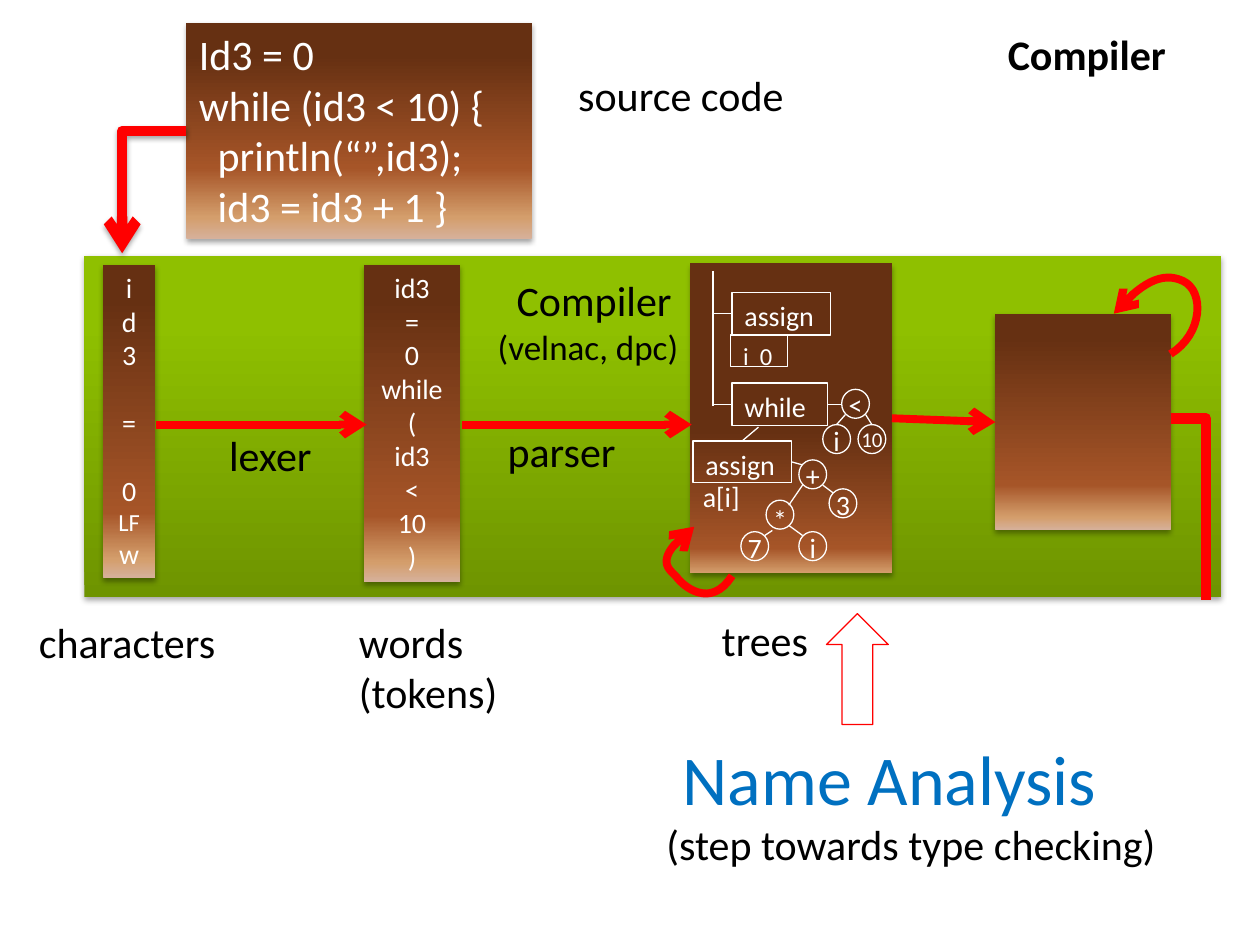
from dataclasses import dataclass
from typing import Optional

from lxml.etree import SubElement
from pptx import Presentation
from pptx.dml.color import RGBColor
from pptx.enum.shapes import MSO_CONNECTOR, MSO_SHAPE
from pptx.enum.text import MSO_ANCHOR, MSO_AUTO_SIZE, PP_ALIGN
from pptx.oxml.ns import qn
from pptx.util import Inches, Pt

COLORS = {"text": "000000", "white": "FFFFFF", "red": "FF0000", "blue": "0070C0"}
GREEN = ((0, "6E9400"), (80, "8FC000"), (100, "90C100"))
BROWN_HEX = ("D6B19C", "D49E6C", "A65528", "663012")
SOURCE_BROWN = tuple(zip((0, 10, 33, 85), BROWN_HEX))
STAGE_BROWN = tuple(zip((0, 6, 21, 89), BROWN_HEX))
TREE_BROWN = tuple(zip((0, 0, 8, 46), BROWN_HEX))
TOP, LEFT, BOTTOM, RIGHT = range(4)


@dataclass
class Line:
    text: str
    size: float = 24
    indent: float = 0
    before: float = 0


@dataclass
class Label:
    left: float
    top: float
    width: float
    height: float
    lines: list
    color: str = "text"
    bold: bool = False


@dataclass
class Node:
    left: float
    top: float
    text: str
    label_width: float = 0.31
    label_height: float = 0.37
    size: float = 16
    drop: float = 0.01


@dataclass
class Joint:
    box: object
    side: int


deck = Presentation()
deck.slide_width, deck.slide_height = Inches(10), Inches(7.5)
page = deck.slides.add_slide(deck.slide_layouts[6])


def rgb(name: str) -> RGBColor:
    return RGBColor.from_string(COLORS[name])


def write(shape, lines: list, color: str, align=PP_ALIGN.LEFT, bold: bool = False) -> None:
    frame = shape.text_frame
    frame.vertical_anchor = MSO_ANCHOR.TOP
    for number, line in enumerate(lines):
        para = frame.add_paragraph() if number else frame.paragraphs[0]
        para.alignment = align
        if line.indent:
            para._p.get_or_add_pPr().set("marL", str(Inches(line.indent)))
        if line.before:
            para.space_before = Pt(line.before)
        span = para.add_run()
        span.text = line.text
        for key, value in {"name": "Calibri", "size": Pt(line.size), "bold": bold}.items():
            setattr(span.font, key, value)
        span.font.color.rgb = rgb(color)


def add_label(label: Label, align=PP_ALIGN.LEFT) -> None:
    box = page.shapes.add_textbox(*map(Inches, (label.left, label.top, label.width, label.height)))
    box.text_frame.word_wrap = False
    box.text_frame.auto_size = MSO_AUTO_SIZE.SHAPE_TO_FIT_TEXT
    write(box, label.lines, label.color, align, label.bold)


def add_shadow(shape) -> None:
    """Put a soft shadow just below the shape."""
    properties = shape._element.spPr
    effects = properties.find(qn("a:effectLst"))
    if effects is None:
        effects = SubElement(properties, qn("a:effectLst"))
    shadow = SubElement(effects, qn("a:outerShdw"), blurRad=str(Pt(3.1)),
                        dist=str(Pt(1.8)), dir="5400000", rotWithShape="0")
    color = SubElement(shadow, qn("a:srgbClr"), val=COLORS["text"])
    SubElement(color, qn("a:alpha"), val="35000")


def add_panel(left: float, top: float, width: float, height: float, stops: tuple):
    """Draw a shadowed rectangle whose gradient runs from bottom to top."""
    panel = page.shapes.add_shape(MSO_SHAPE.RECTANGLE, *map(Inches, (left, top, width, height)))
    panel.line.fill.background()
    panel.shadow.inherit = False
    panel.fill.gradient()
    gradient = panel._element.spPr.find(qn("a:gradFill"))
    for child in list(gradient):
        gradient.remove(child)
    stop_list = SubElement(gradient, qn("a:gsLst"))
    for position, color in stops:
        stop = SubElement(stop_list, qn("a:gs"), pos=str(position * 1000))
        SubElement(stop, qn("a:srgbClr"), val=color)
    SubElement(gradient, qn("a:lin"), ang="16200000", scaled="0")
    add_shadow(panel)
    return panel


def add_outline(kind, left: float, top: float, width: float, height: float,
                color: str = "white", fill: Optional[str] = None):
    shape = page.shapes.add_shape(kind, *map(Inches, (left, top, width, height)))
    shape.shadow.inherit = False
    if fill:
        shape.fill.solid()
        shape.fill.fore_color.rgb = rgb(fill)
    else:
        shape.fill.background()
    shape.line.color.rgb, shape.line.width = rgb(color), Pt(0.75)
    return shape


def add_tree_box(left: float, top: float, width: float, height: float, text: str, size: float = 16):
    box = add_outline(MSO_SHAPE.RECTANGLE, left, top, width, height)
    box.text_frame.word_wrap = True
    write(box, [Line(text, size)], "white")
    return box


def add_node(node: Node) -> None:
    diameter, height = 0.22, 0.23
    add_outline(MSO_SHAPE.OVAL, node.left, node.top, diameter, height)
    add_label(Label(node.left + (diameter - node.label_width) / 2,
                    node.top + (height - node.label_height) / 2 + node.drop,
                    node.label_width, node.label_height,
                    [Line(node.text, node.size)], "white"), PP_ALIGN.CENTER)


def add_arrowhead(shape) -> None:
    SubElement(shape.line._get_or_add_ln(), qn("a:tailEnd"), type="arrow")


def add_line(start: tuple, end: tuple, color: str = "white", width: float = 0.75, arrow: bool = False,
             bent: bool = False, begin: Optional[Joint] = None, finish: Optional[Joint] = None):
    kind = MSO_CONNECTOR.ELBOW if bent else MSO_CONNECTOR.STRAIGHT
    line = page.shapes.add_connector(kind, *map(Inches, (*start, *end)))
    if bent:
        line._element.spPr.find(qn("a:prstGeom")).set("prst", "bentConnector2")
    if begin:
        line.begin_connect(begin.box, begin.side)
    if finish:
        line.end_connect(finish.box, finish.side)
    line.line.color.rgb, line.line.width = rgb(color), Pt(width)
    if arrow:
        add_arrowhead(line)
    SubElement(line._element.spPr, qn("a:effectLst"))
    return line


def add_loop(start: tuple, *curves: tuple) -> None:
    """Draw an arrow along cubic Bezier curves, each given as two controls and an end."""
    steps, points, origin = 16, [], start
    for curve in curves:
        for step in range(1, steps + 1):
            t = step / steps
            weights = ((1 - t) ** 3, 3 * t * (1 - t) ** 2, 3 * t * t * (1 - t), t ** 3)
            corners = (origin, *curve)
            points.append(tuple(Inches(sum(w * c[axis] for w, c in zip(weights, corners)))
                                for axis in (0, 1)))
        origin = curve[-1]
    builder = page.shapes.build_freeform(*map(Inches, start))
    builder.add_line_segments(points, close=False)
    loop = builder.convert_to_shape()
    loop.shadow.inherit = False
    loop.fill.background()
    loop.line.color.rgb, loop.line.width = rgb("red"), Pt(4.5)
    add_arrowhead(loop)


compiler = add_panel(0.67, 2.03, 9.02, 2.71, GREEN)
compiler.text_frame.margin_left, compiler.text_frame.margin_top = Inches(3.28), Inches(0.15)
write(compiler, [Line("Compiler", indent=0.15), Line("(velnac, dpc)", 20)], "text")

source = add_panel(1.48, 0.18, 2.74, 1.72, SOURCE_BROWN)
write(source, [Line("Id3 = 0"), Line("while (id3 < 10) {"),
               Line("println(“”,id3);", indent=0.15), Line("id3 = id3 + 1 }", indent=0.15)], "white")
add_shadow(add_line((1.48, 1.04), (0.97, 2.01), "red", 6, arrow=True, bent=True))

characters = add_panel(0.82, 2.1, 0.41, 2.49, STAGE_BROWN)
write(characters, [Line("i", 16), Line("d", 16), Line("3", 16), Line("=", 16, before=19.5),
                   Line("0", 16, before=19.5), Line("LF", 14), Line("w", 16)], "white", PP_ALIGN.CENTER)
words = add_panel(2.89, 2.1, 0.76, 2.52, STAGE_BROWN)
write(words, [Line(word, 16) for word in "id3 = 0 while ( id3 < 10 )".split()], "white", PP_ALIGN.CENTER)
trees = add_panel(5.48, 2.09, 1.6, 2.46, TREE_BROWN)
result = add_panel(7.9, 2.49, 1.39, 1.72, STAGE_BROWN)

add_line((1.24, 3.37), (2.91, 3.37), "red", 4.5, arrow=True)
add_line((3.67, 3.37), (5.49, 3.37), "red", 4.5, arrow=True)
add_line((7.08, 3.32), (7.9, 3.35), "red", 4.5, arrow=True,
         begin=Joint(trees, RIGHT), finish=Joint(result, LEFT))
add_line((9.29, 3.32), (9.57, 4.76), "red", 6, bent=True)

first_assign = add_tree_box(5.81, 2.32, 0.78, 0.34, "assign")
add_tree_box(5.8, 2.66, 0.45, 0.25, "i  0", 14)
loop_box = add_tree_box(5.81, 3.04, 0.76, 0.34, "while")
body_assign = add_tree_box(5.5, 3.5, 0.78, 0.33, "assign")

for node in (Node(6.34, 3.65, "+"), Node(6.08, 3.97, "*", drop=0.04), Node(6.58, 3.88, "3"),
             Node(5.88, 4.22, "7"), Node(6.34, 4.22, "i", 0.25), Node(6.68, 3.09, "<"),
             Node(6.53, 3.37, "i", 0.25), Node(6.81, 3.37, "10", 0.37, 0.3, 12, 0)):
    add_node(node)

add_line((5.66, 2.15), (5.66, 3.22))
add_line((5.81, 2.49), (5.66, 2.49), begin=Joint(first_assign, LEFT))
add_line((5.81, 3.21), (5.66, 3.21), begin=Joint(loop_box, LEFT))
add_line((6.68, 3.21), (6.57, 3.21), finish=Joint(loop_box, RIGHT))
add_line((5.89, 3.5), (6.02, 3.39), begin=Joint(body_assign, TOP))
add_line((6.28, 3.66), (6.37, 3.69), begin=Joint(body_assign, RIGHT))
for start, end in (((6.37, 3.85), (6.26, 4.01)), ((6.13, 4.21), (6.07, 4.25)),
                   ((6.53, 3.85), (6.61, 3.91)), ((6.26, 4.17), (6.37, 4.25)),
                   ((6.71, 3.29), (6.64, 3.37)), ((6.87, 3.29), (6.92, 3.37))):
    add_line(start, end)

add_loop((9.29, 2.81), ((9.55, 2.65), (9.56, 2.31), (9.39, 2.23)),
         ((9.22, 2.15), (9.05, 2.25), (8.84, 2.49)))
add_loop((5.81, 4.57), ((5.64, 4.84), (5.42, 4.65), (5.37, 4.58)),
         ((5.32, 4.52), (5.16, 4.45), (5.51, 4.18)))
add_outline(MSO_SHAPE.UP_ARROW, 6.56, 4.87, 0.49, 0.88, "red", "white")

for label in (Label(4.49, 0.5, 1.85, 0.5, [Line("source code")]),
              Label(7.9, 0.18, 1.8, 0.5, [Line("Compiler")], bold=True),
              Label(1.72, 3.36, 0.86, 0.5, [Line("lexer")]),
              Label(3.93, 3.33, 1.07, 0.5, [Line("parser")]),
              Label(5.48, 3.76, 0.5, 0.37, [Line("a[i]", 16)], "white"),
              Label(0.21, 4.84, 1.62, 0.5, [Line("characters")]),
              Label(2.75, 4.84, 1.31, 0.91, [Line("words"), Line("(tokens)")]),
              Label(5.63, 4.83, 0.9, 0.5, [Line("trees")]),
              Label(5.32, 5.79, 3.52, 0.77, [Line("Name Analysis", 40)], "blue"),
              Label(5.19, 6.45, 4.12, 0.5, [Line("(step towards type checking)")])):
    add_label(label)

deck.save("out.pptx")
